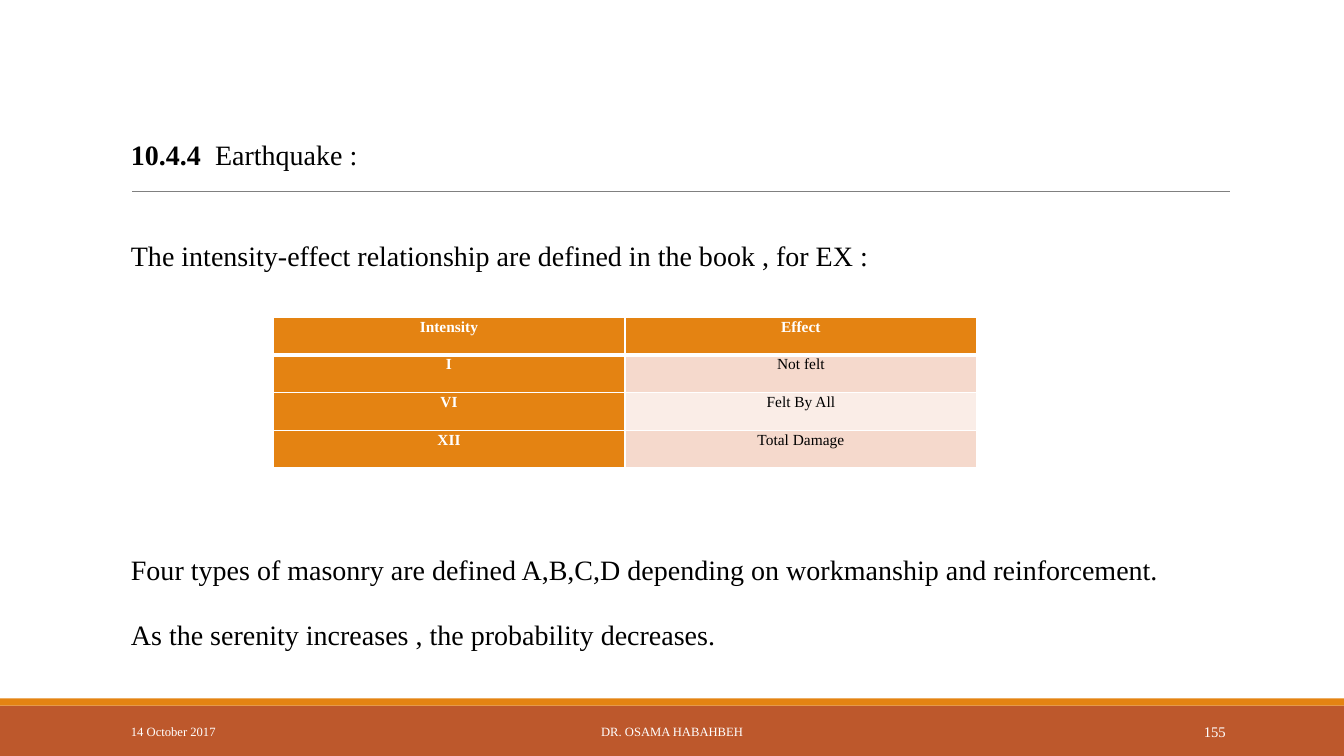
from lxml import etree
from pptx import Presentation
from pptx import util as u
from pptx.dml.color import RGBColor
from pptx.enum import shapes, text
from pptx.oxml import ns

FONT = "Times New Roman"
WHITE, BLACK = "FFFFFF", "000000"
ORANGE, RUST, GREY = "E48312", "BD582C", "808080"
BANDS = ("F5D9CC", "FAEDE7")
LEFT, CENTER, RIGHT = text.PP_ALIGN.LEFT, text.PP_ALIGN.CENTER, text.PP_ALIGN.RIGHT


def color(value):
    return RGBColor.from_string(value)


def add_span(para, words, size=20, fill=BLACK, bold=False):
    span = para.add_run()
    span.text = words
    span.font.name = FONT
    span.font.size = u.Pt(size)
    span.font.bold = bold
    span.font.color.rgb = color(fill)


def format_para(para, align=LEFT, spacing=1.0, before=0, after=0):
    para.alignment = align
    para.line_spacing = spacing
    para.space_before = u.Pt(before)
    para.space_after = u.Pt(after)


def add_box(page, left, top, width, height, anchor=text.MSO_ANCHOR.TOP):
    frame = page.shapes.add_textbox(u.Cm(left), u.Cm(top), u.Cm(width), u.Cm(height)).text_frame
    frame.word_wrap = True
    frame.vertical_anchor = anchor
    return frame


def add_bar(page, top, height, fill):
    bar = page.shapes.add_shape(
        shapes.MSO_SHAPE.RECTANGLE, 0, u.Cm(top), u.Cm(33.87), u.Cm(height))
    bar.shadow.inherit = False
    bar.fill.solid()
    bar.fill.fore_color.rgb = color(fill)
    bar.line.fill.background()


def add_rule(page, left, right, top):
    rule = page.shapes.add_connector(
        shapes.MSO_CONNECTOR.STRAIGHT, u.Cm(left), u.Cm(top), u.Cm(right), u.Cm(top))
    rule.line.color.rgb = color(GREY)
    rule.line.width = u.Pt(0.5)
    etree.SubElement(rule._element.spPr, ns.qn("a:effectLst"))


def add_body(page):
    frame = add_box(page, 3.05, 3.43, 27.94, 14.12)
    frame.margin_right = 0
    lines = [
        ([("10.4.4  ", True), ("Earthquake :", False)], 0.9, 0, 2),
        ([("The intensity-effect relationship are defined in the book , for EX :", False)],
         0.9, 49, 2),
        ([("Four types of masonry are defined A,B,C,D depending on workmanship "
           "and reinforcement.", False)], 1.07, 196, 8),
        ([("As the serenity increases , the probability decreases.", False)], 1.07, 13, 8),
    ]
    for index, (spans, spacing, before, after) in enumerate(lines):
        para = frame.add_paragraph() if index else frame.paragraphs[0]
        format_para(para, spacing=spacing, before=before, after=after)
        for words, bold in spans:
            add_span(para, words, bold=bold)


def add_footer(page, words, left, width, align, size=9):
    frame = add_box(page, left, 17.93, width, 1.01, text.MSO_ANCHOR.MIDDLE)
    format_para(frame.paragraphs[0], align)
    add_span(frame.paragraphs[0], words, size, WHITE)


def add_borders(cell, **widths):
    properties = cell._tc.get_or_add_tcPr()
    for side in "LRTB":
        line = etree.SubElement(properties, ns.qn("a:ln" + side),
                                w=str(u.Pt(widths.get(side, 1))))
        fill = etree.SubElement(line, ns.qn("a:solidFill"))
        etree.SubElement(fill, ns.qn("a:srgbClr"), val=WHITE)


def fill_cell(cell, words, fill, ink, bold):
    cell.fill.solid()
    cell.fill.fore_color.rgb = color(fill)
    cell.margin_left = cell.margin_right = u.Cm(0.18)
    cell.margin_top = cell.margin_bottom = 0
    para = cell.text_frame.paragraphs[0]
    format_para(para, CENTER, 1.07)
    add_span(para, words, 11, ink, bold)


def add_intensity_table(page):
    rows = [("Intensity", "Effect"), ("I", "Not felt"),
            ("VI", "Felt By All"), ("XII", "Total Damage")]
    table = page.shapes.add_table(
        len(rows), 2, u.Cm(6.88), u.Cm(7.99), u.Cm(17.74), u.Cm(3.8)).table
    for row, entries in enumerate(rows):
        for column, words in enumerate(entries):
            cell = table.cell(row, column)
            add_borders(cell, T=3 if row == 1 else 1, B=3 if row == 0 else 1)
            if row == 0 or column == 0:
                fill_cell(cell, words, ORANGE, WHITE, True)
            else:
                fill_cell(cell, words, BANDS[(row - 1) % 2], BLACK, False)


def main():
    deck = Presentation()
    deck.slide_width, deck.slide_height = u.Cm(33.87), u.Cm(19.05)
    page = deck.slides.add_slide(deck.slide_layouts[6])
    add_bar(page, 17.78, 1.27, RUST)
    add_bar(page, 17.6, 0.18, ORANGE)
    add_rule(page, 3.33, 31, 4.82)
    add_body(page)
    add_footer(page, "14 October 2017", 3.05, 6.86, LEFT)
    add_footer(page, "DR. OSAMA HABAHBEH", 10.24, 13.39, CENTER)
    add_footer(page, "155", 27.51, 3.63, RIGHT, 10.5)
    add_intensity_table(page)
    deck.save("out.pptx")


if __name__ == "__main__":
    main()
